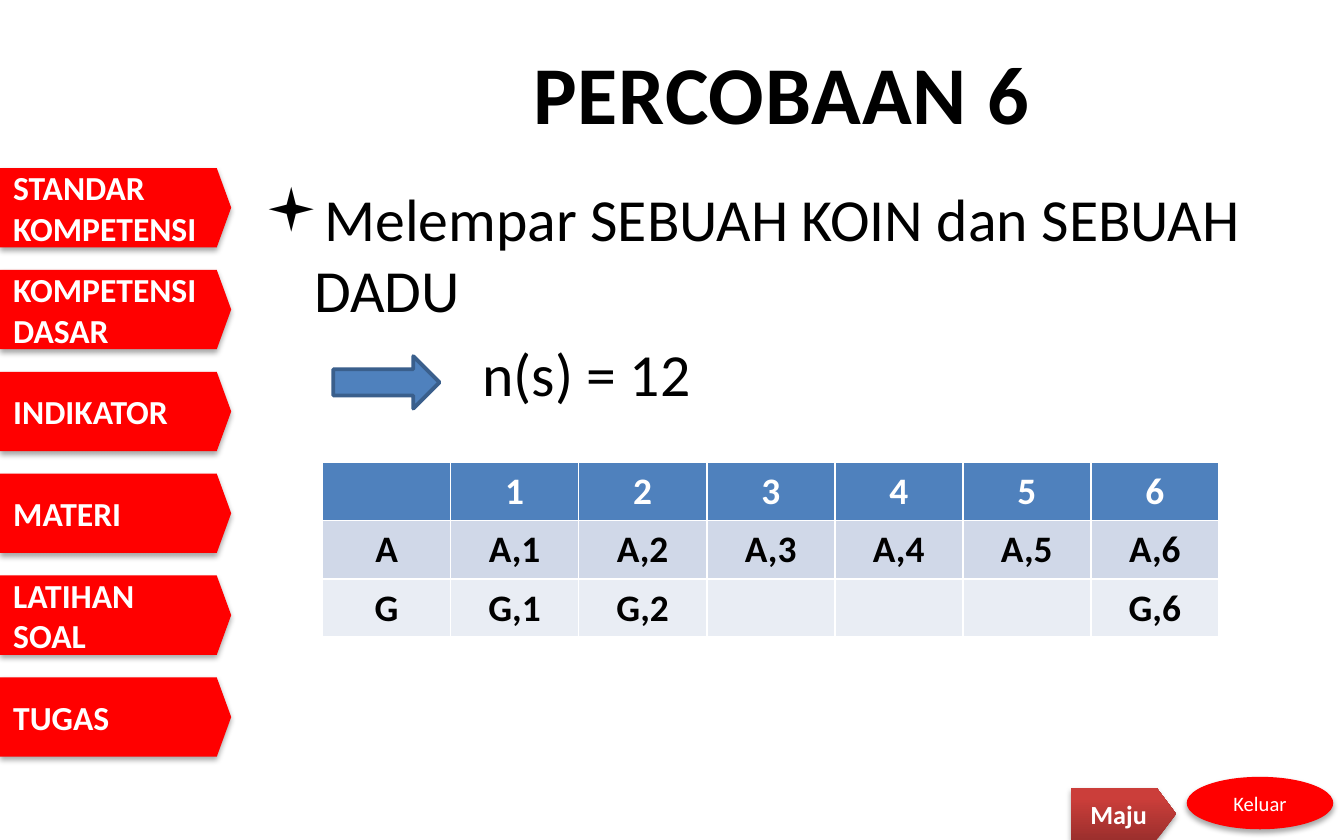
from lxml import etree
from pptx import Presentation
from pptx.dml.color import RGBColor
from pptx.enum import shapes, text
from pptx.oxml import ns
from pptx.util import Inches, Pt

COLORS = {
    "red": "FF0000", "dark_red": "9C2F2D", "light_red": "CB3E3A",
    "blue": "4F81BD", "blue_edge": "3A5F8C", "band": "D0D8E8",
    "pale": "E9EDF4", "white": "FFFFFF", "black": "000000",
}
TITLE = "PERCOBAAN 6"
MENU = ["STANDAR KOMPETENSI", "KOMPETENSI DASAR", "INDIKATOR", "MATERI",
        "LATIHAN SOAL", "TUGAS"]
STATEMENT = "Melempar SEBUAH KOIN dan SEBUAH DADU"
RESULT = "n(s) = 12"
OUTCOMES = [
    ["", "1", "2", "3", "4", "5", "6"],
    ["A", "A,1", "A,2", "A,3", "A,4", "A,5", "A,6"],
    ["G", "G,1", "G,2", "", "", "", "G,6"],
]
ROW_FILLS = ["blue", "band", "pale"]
MENU_TOP, MENU_STEP = 1.25, 0.758
COLUMN_WIDTH, ROW_HEIGHT = 0.953, 0.43


def color(name):
    return RGBColor.from_string(COLORS[name])


def style(para, ink, align=text.PP_ALIGN.LEFT, **formats):
    para.alignment = align
    para.font.color.rgb = color(ink)
    for name, value in {"name": "Calibri", **formats}.items():
        setattr(para.font, name, value)


def add_child(parent, tag, **attributes):
    return etree.SubElement(parent, ns.qn(tag), attributes)


def add_shadow(shape):
    effects = shape._element.spPr.find(ns.qn("a:effectLst"))
    shadow = add_child(effects, "a:outerShdw", blurRad=str(Pt(3.1)),
                       dist=str(Pt(1.8)), dir="5400000", rotWithShape="0")
    shade = add_child(shadow, "a:srgbClr", val=COLORS["black"])
    add_child(shade, "a:alpha", val="35000")


def add_button(page, kind, place, label, point=None, **formats):
    button = page.shapes.add_shape(kind, *map(Inches, place))
    button.shadow.inherit = False
    button.fill.solid()
    button.fill.fore_color.rgb = color("red")
    button.line.fill.background()
    add_shadow(button)
    if point:
        button.adjustments[0] = point
    frame = button.text_frame
    frame.word_wrap = True
    frame.vertical_anchor = text.MSO_ANCHOR.MIDDLE
    frame.text = label
    style(frame.paragraphs[0], "white", **formats)
    return button


def add_navigation(page):
    pentagon = shapes.MSO_SHAPE.PENTAGON
    center = text.PP_ALIGN.CENTER
    for index, label in enumerate(MENU):
        place = (0, MENU_TOP + index * MENU_STEP, 1.72, 0.59)
        add_button(page, pentagon, place, label, 0.182, size=Pt(18), bold=True)
    add_button(page, shapes.MSO_SHAPE.OVAL, (8.83, 5.78, 1.09, 0.39), "Keluar",
               align=center, size=Pt(11))
    forward = add_button(page, pentagon, (7.97, 5.86, 0.78, 0.39), "Maju", 0.373,
                         align=center, size=Pt(14), bold=True)
    forward.fill.gradient()
    forward.fill.gradient_angle = 90
    stops = [(0, "dark_red"), (0.8, "light_red")]
    for stop, (position, name) in zip(forward.fill.gradient_stops, stops):
        stop.position = position
        stop.color.rgb = color(name)


def add_title(page):
    title = page.shapes.title
    place = {"left": 1.87, "top": 0.25, "width": 7.89, "height": 0.86}
    for name, value in place.items():
        setattr(title, name, Inches(value))
    frame = title.text_frame
    frame.text = TITLE
    frame.auto_size = text.MSO_AUTO_SIZE.NONE
    frame.vertical_anchor = text.MSO_ANCHOR.MIDDLE
    para = frame.paragraphs[0]
    style(para, "black", text.PP_ALIGN.CENTER, size=Pt(44), bold=True)
    para.runs[0].font._element.set("spc", "50")


def add_body(page):
    box = page.shapes.add_textbox(*map(Inches, (1.87, 1.3, 7.89, 4.58)))
    frame = box.text_frame
    frame.word_wrap = True
    frame.text = STATEMENT
    statement = frame.paragraphs[0]
    result = frame.add_paragraph()
    result.text = RESULT
    result.space_before = Pt(6.4)
    indents = [(statement, 0.37, -0.37), (result, 1.62, 0)]
    for para, margin, indent in indents:
        properties = para._p.get_or_add_pPr()
        properties.set("marL", str(Inches(margin)))
        properties.set("indent", str(Inches(indent)))
    add_child(statement._p.pPr, "a:buFont", typeface="Wingdings")
    add_child(statement._p.pPr, "a:buChar", char="▪")
    for para in (statement, result):
        style(para, "black", size=Pt(32))


def add_arrow(page):
    arrow = page.shapes.add_shape(shapes.MSO_SHAPE.RIGHT_ARROW,
                                  *map(Inches, (2.48, 2.65, 0.79, 0.39)))
    arrow.shadow.inherit = False
    arrow.fill.solid()
    arrow.fill.fore_color.rgb = color("blue")
    arrow.line.color.rgb = color("blue_edge")
    arrow.line.width = Pt(2)


def add_outcomes(page):
    rows, columns = len(OUTCOMES), len(OUTCOMES[0])
    place = (2.4, 3.44, columns * COLUMN_WIDTH, rows * ROW_HEIGHT)
    table = page.shapes.add_table(rows, columns, *map(Inches, place)).table
    for column in table.columns:
        column.width = Inches(COLUMN_WIDTH)
    for row_index, (values, fill) in enumerate(zip(OUTCOMES, ROW_FILLS)):
        table.rows[row_index].height = Inches(ROW_HEIGHT)
        ink = "black" if row_index else "white"
        for column_index, value in enumerate(values):
            cell = table.cell(row_index, column_index)
            cell.fill.solid()
            cell.fill.fore_color.rgb = color(fill)
            cell.text = value
            style(cell.text_frame.paragraphs[0], ink, text.PP_ALIGN.CENTER,
                  size=Pt(20), bold=True)


def main():
    deck = Presentation()
    deck.slide_width, deck.slide_height = Inches(10), Inches(6.25)
    page = deck.slides.add_slide(deck.slide_layouts.get_by_name("Title Only"))
    add_navigation(page)
    add_title(page)
    add_body(page)
    add_arrow(page)
    add_outcomes(page)
    deck.save("out.pptx")


if __name__ == "__main__":
    main()
